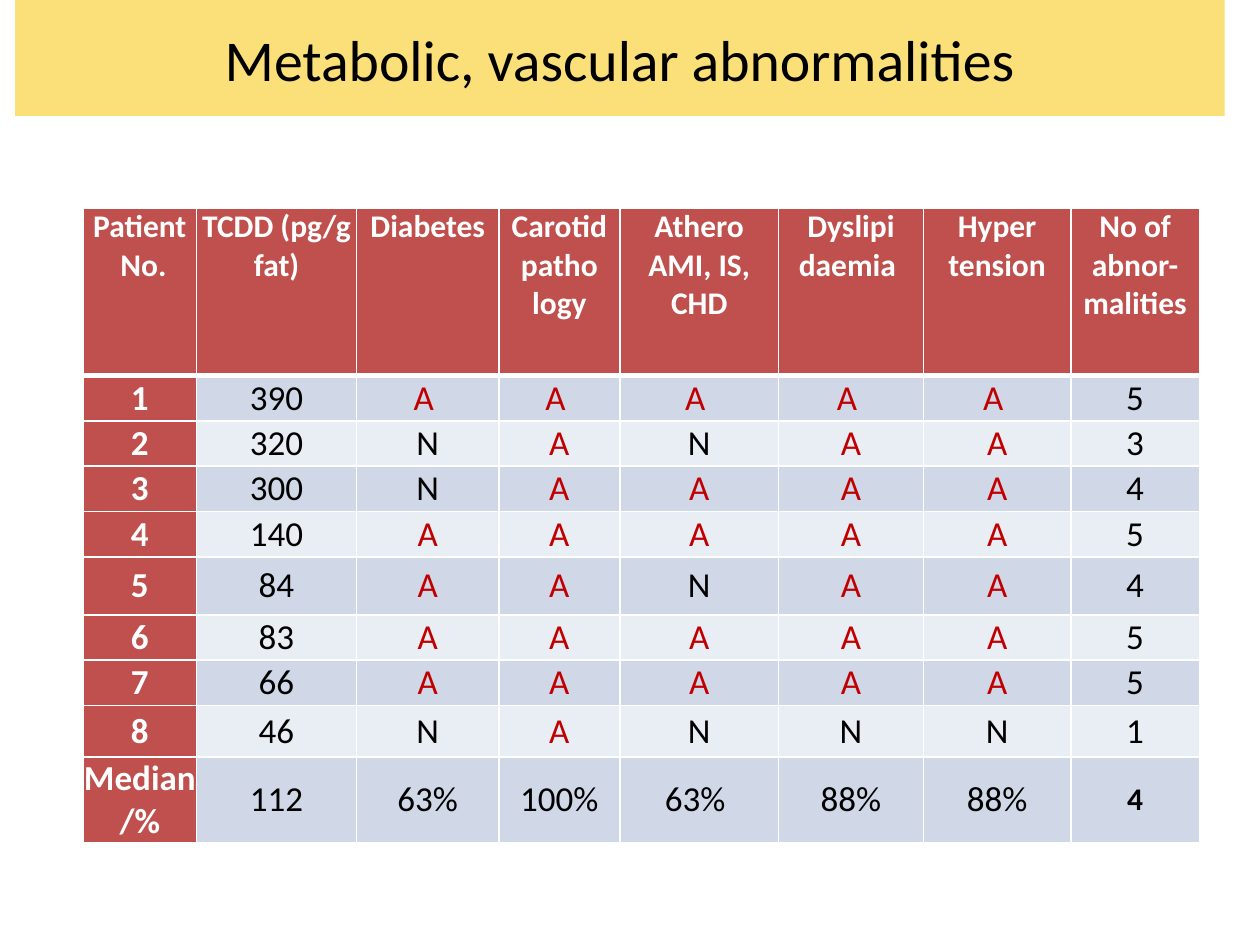
"""Build a slide with a table of metabolic and vascular abnormalities by patient."""
from lxml import etree
from pptx import Presentation
from pptx.dml.color import RGBColor
from pptx.enum.shapes import MSO_SHAPE
from pptx.enum.text import MSO_ANCHOR, PP_ALIGN
from pptx.oxml.ns import qn
from pptx.util import Inches, Pt

RECTANGLE = MSO_SHAPE.RECTANGLE
TOP, MIDDLE = MSO_ANCHOR.TOP, MSO_ANCHOR.MIDDLE
CENTER = PP_ALIGN.CENTER

COLORS = {
    "banner": "FBD753",
    "header": "C0504D",
    "odd": "D0D8E8",
    "even": "E9EDF4",
    "white": "FFFFFF",
    "black": "000000",
    "abnormal": "C00000",
}
COLUMN_WIDTHS = [0.9, 1.27, 1.13, 0.96, 1.26, 1.15, 1.17, 1.02]
ROW_HEIGHTS = [1.33, 0.36, 0.36, 0.36, 0.36, 0.46, 0.36, 0.36, 0.41, 0.68]
ROWS = [
    ["Patient\n No.", "TCDD (pg/g\nfat)", "Diabetes", "Carotid patho\nlogy",
     "Athero AMI, IS, CHD", "Dyslipi\ndaemia ", "Hyper\ntension", "No of abnor-malities"],
    ["1", "390", "A ", "A ", "A ", "A ", "A ", "5"],
    ["2", "320", "N", "A", "N", "A", "A", "3"],
    ["3", "300", "N", "A", "A", "A", "A", "4"],
    ["4", "140", "A", "A", "A", "A", "A", "5"],
    ["5", "84", "A", "A", "N", "A", "A", "4"],
    ["6", "83", "A", "A", "A", "A", "A", "5"],
    ["7", "66", "A", "A", "A", "A", "A", "5"],
    ["8", "46", "N", "A", "N", "N", "N", "1"],
    ["Median/%", "112", "63%", "100%", "63% ", "88%", "88%", "4"],
]


def write_text(frame, text, size=20, color="black", bold=False):
    frame.word_wrap = True
    for index, line in enumerate(text.split("\n")):
        paragraph = frame.paragraphs[0] if index == 0 else frame.add_paragraph()
        paragraph.alignment = CENTER
        span = paragraph.add_run()
        span.text = line
        span.font.name = "Calibri"
        span.font.size = Pt(size)
        span.font.bold = bold
        span.font.color.rgb = RGBColor.from_string(COLORS[color])


def add_border(cell, side, width):
    properties = cell._tc.get_or_add_tcPr()
    line = etree.SubElement(properties, qn(f"a:ln{side}"), w=str(Pt(width)))
    fill = etree.SubElement(line, qn("a:solidFill"))
    etree.SubElement(fill, qn("a:srgbClr"), val=COLORS["white"])


deck = Presentation()
deck.slide_width, deck.slide_height = Inches(10), Inches(7.5)
page = deck.slides.add_slide(deck.slide_layouts[6])

banner = page.shapes.add_shape(RECTANGLE, Inches(0.12), Inches(0), Inches(9.6), Inches(0.92))
banner.shadow.inherit = False
banner.line.fill.background()
banner.fill.solid()
banner.fill.fore_color.rgb = RGBColor.from_string(COLORS["banner"])
banner_color = banner._element.spPr.find(qn("a:solidFill"))[0]
etree.SubElement(banner_color, qn("a:alpha"), val="78000")
banner.text_frame.vertical_anchor = MIDDLE
write_text(banner.text_frame, "Metabolic, vascular abnormalities", size=33)

table = page.shapes.add_table(
    len(ROW_HEIGHTS), len(COLUMN_WIDTHS), Inches(0.66), Inches(1.65),
    Inches(sum(COLUMN_WIDTHS)), Inches(sum(ROW_HEIGHTS))).table
for column, width in zip(table.columns, COLUMN_WIDTHS):
    column.width = Inches(width)
for row, height in zip(table.rows, ROW_HEIGHTS):
    row.height = Inches(height)

last_row, last_column = len(ROWS) - 1, len(COLUMN_WIDTHS) - 1
for row_index, values in enumerate(ROWS):
    for column_index, text in enumerate(values):
        cell = table.cell(row_index, column_index)
        is_top = row_index == 0
        is_header = is_top or column_index == 0
        is_total = (row_index, column_index) == (last_row, last_column)
        cell.margin_left = cell.margin_right = cell.margin_top = cell.margin_bottom = 0
        cell.vertical_anchor = TOP if is_top else MIDDLE
        for side in "LRTB":
            below_header = (row_index, side) in [(0, "B"), (1, "T")]
            add_border(cell, side, 3 if below_header else 1)
        band = "header" if is_header else "odd" if row_index % 2 else "even"
        cell.fill.solid()
        cell.fill.fore_color.rgb = RGBColor.from_string(COLORS[band])
        color = "white" if is_header else "abnormal" if text.strip() == "A" else "black"
        write_text(cell.text_frame, text, size=18 if is_top or is_total else 20,
                   color=color, bold=is_header or is_total)

deck.save("out.pptx")
